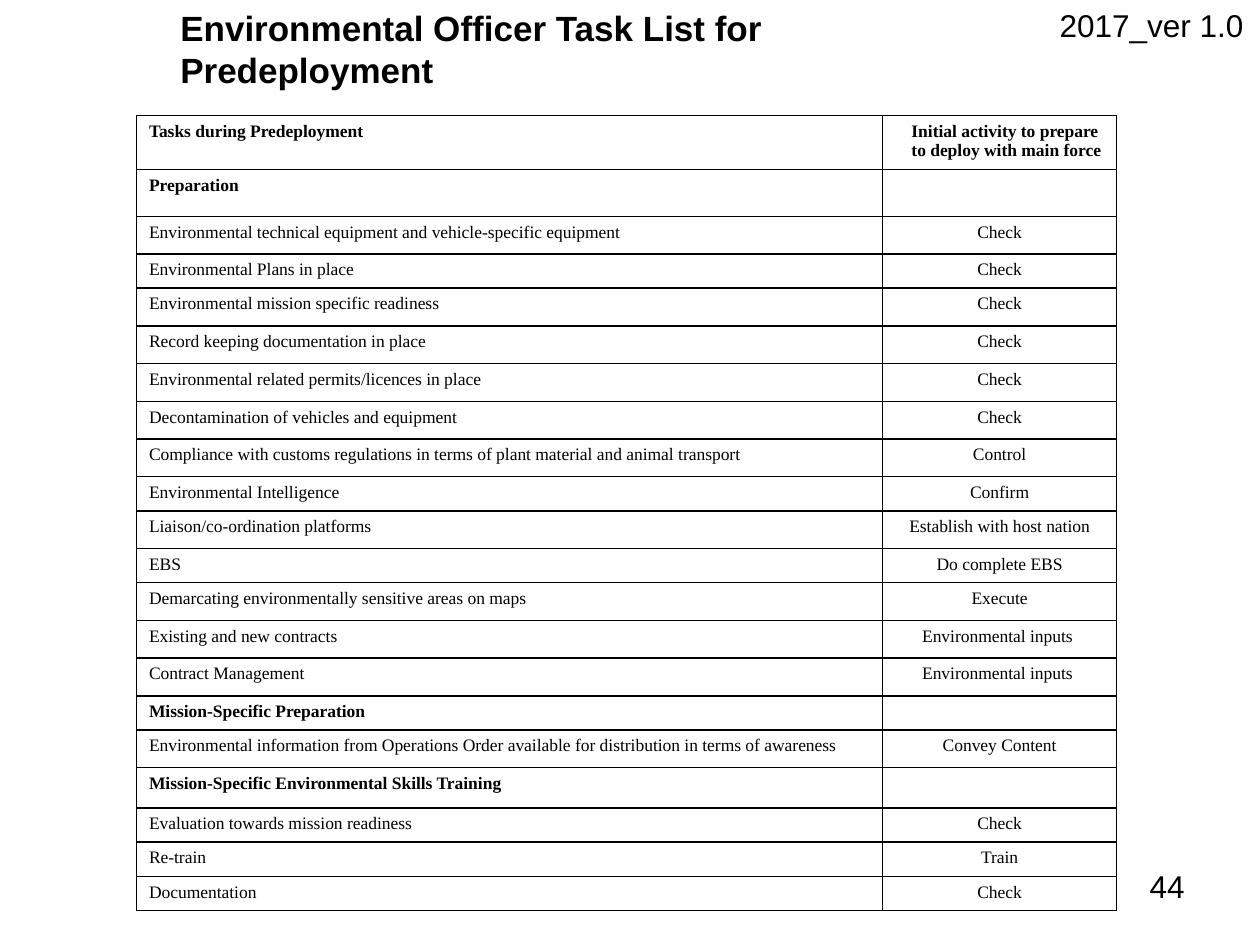
from lxml.etree import SubElement
from pptx import Presentation
from pptx.dml.color import RGBColor
from pptx.enum.text import MSO_ANCHOR, MSO_AUTO_SIZE, PP_ALIGN
from pptx.oxml.ns import qn
from pptx.util import Cm, Pt

COLORS = {"ink": "000000"}
INK = RGBColor.from_string(COLORS["ink"])
HANGING = Cm(0.97)
TALL, NORMAL, LOW = 0.76, 0.76, 0.69

# task, activity, row height in cm; a row without activity is a heading
ROWS = [
    ("Tasks during Predeployment", "Initial activity to prepare to deploy with main force", 1.09),
    ("Preparation", "", 0.94),
    ("Environmental technical equipment and vehicle-specific equipment", "Check", NORMAL),
    ("Environmental Plans in place", "Check", LOW),
    ("Environmental mission specific readiness", "Check", NORMAL),
    ("Record keeping documentation in place", "Check", NORMAL),
    ("Environmental related permits/licences in place", "Check", NORMAL),
    ("Decontamination of vehicles and equipment", "Check", NORMAL),
    ("Compliance with customs regulations in terms of plant material and animal transport",
     "Control", NORMAL),
    ("Environmental Intelligence", "Confirm", LOW),
    ("Liaison/co-ordination platforms", "Establish with host nation", NORMAL),
    ("EBS", "Do complete EBS", LOW),
    ("Demarcating environmentally sensitive areas on maps", "Execute", NORMAL),
    ("Existing and new contracts", "Environmental inputs ", NORMAL),
    ("Contract Management", "Environmental inputs ", NORMAL),
    ("Mission-Specific Preparation", "", LOW),
    ("Environmental information from Operations Order available for distribution "
     "in terms of awareness", "Convey Content", NORMAL),
    ("Mission-Specific Environmental Skills Training", "", 0.81),
    ("Evaluation towards mission readiness", "Check", LOW),
    ("Re-train", "Train", LOW),
    ("Documentation", "Check", LOW),
]


def write(frame, text, font, size, bold=False, align=PP_ALIGN.LEFT):
    para = frame.paragraphs[0]
    para.alignment = align
    span = para.add_run()
    span.text = text
    span.font.color.rgb = INK
    for name, value in {"name": font, "size": Pt(size), "bold": bold}.items():
        setattr(span.font, name, value)
    return para


def add_borders(cell):
    properties = cell._tc.get_or_add_tcPr()
    for side in ("lnL", "lnR", "lnT", "lnB"):
        line = SubElement(properties, qn(f"a:{side}"), w=str(Pt(1)))
        fill = SubElement(line, qn("a:solidFill"))
        SubElement(fill, qn("a:srgbClr"), val=COLORS["ink"])


deck = Presentation()
deck.slide_width, deck.slide_height = Cm(25.4), Cm(19.05)
page = deck.slides.add_slide(deck.slide_layouts[5])

# Task table
total = sum(height for _, _, height in ROWS)
table = page.shapes.add_table(
    len(ROWS), 2, Cm(2.75), Cm(2.33), Cm(19.76), Cm(total)).table
table.first_row = table.horz_banding = False
table.columns[0].width, table.columns[1].width = Cm(15.04), Cm(4.72)
for index, (task, activity, height) in enumerate(ROWS):
    table.rows[index].height = Cm(height)
    header = index == 0
    for column, text in enumerate((task, activity)):
        cell = table.cell(index, column)
        add_borders(cell)
        cell.fill.background()
        if not text:
            SubElement(cell.text_frame.paragraphs[0]._p, qn("a:endParaRPr"), sz="1000")
            continue
        centred = column == 1 and not header
        para = write(cell.text_frame, text, "Times New Roman", 10,
                     bold=header or not activity,
                     align=PP_ALIGN.CENTER if centred else PP_ALIGN.LEFT)
        plain_indent = header and column == 1
        layout = para._p.get_or_add_pPr()
        layout.set("marL", str(Cm(0.33) if plain_indent else HANGING))
        layout.set("indent", str(0 if plain_indent else -HANGING))

# Title
title = page.shapes.title
title.left, title.top, title.width, title.height = Cm(3.38), Cm(0), Cm(13.97), Cm(1.96)
for name, value in {"vertical_anchor": MSO_ANCHOR.TOP, "word_wrap": True,
                    "auto_size": MSO_AUTO_SIZE.NONE}.items():
    setattr(title.text_frame, name, value)
write(title.text_frame, "Environmental Officer Task List for Predeployment", "Arial", 20, bold=True)

# Page number and version
for text, place, align, wrap in [
    ("44", (18.21, 17.35, 5.92, 1.32), PP_ALIGN.RIGHT, True),
    ("2017_ver 1.0", (21.11, 0, 4.24, 1.02), PP_ALIGN.LEFT, False),
]:
    box = page.shapes.add_textbox(*map(Cm, place))
    box.text_frame.word_wrap = wrap
    write(box.text_frame, text, "Arial", 18, align=align)

deck.save("out.pptx")
